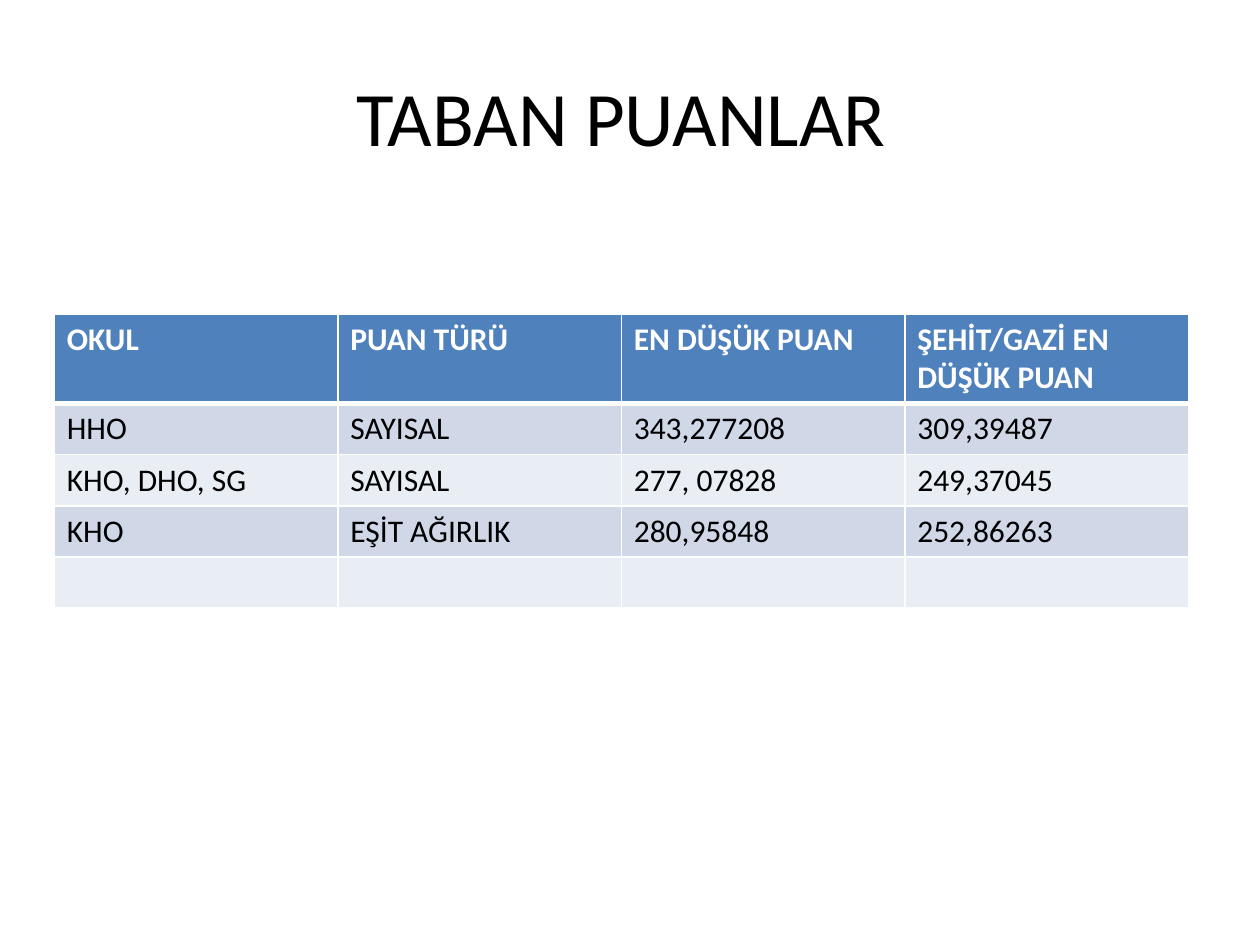
from lxml.etree import SubElement
from pptx import Presentation
from pptx.dml.color import RGBColor
from pptx.enum.text import MSO_ANCHOR, PP_ALIGN
from pptx.oxml.ns import qn
from pptx.util import Pt

FONT = "Calibri"
BLACK = RGBColor(0x00, 0x00, 0x00)
WHITE = RGBColor(0xFF, 0xFF, 0xFF)
HEADER_BLUE = RGBColor(0x4F, 0x81, 0xBD)
BAND_DARK = RGBColor(0xD0, 0xD8, 0xE8)
BAND_LIGHT = RGBColor(0xE9, 0xED, 0xF4)

HEADER_HEIGHT = 50.4
ROW_HEIGHT = 29.2
SCORES = [
    ["OKUL", "PUAN TÜRÜ", "EN DÜŞÜK PUAN", "ŞEHİT/GAZİ EN DÜŞÜK PUAN"],
    ["HHO", "SAYISAL", "343,277208", "309,39487"],
    ["KHO, DHO, SG", "SAYISAL", "277, 07828", "249,37045"],
    ["KHO", "EŞİT AĞIRLIK", "280,95848", "252,86263"],
    ["", "", "", ""],
]


def add_run(paragraph, text, size, color, bold=False):
    run = paragraph.add_run()
    run.text = text
    run.font.name = FONT
    run.font.size = Pt(size)
    run.font.bold = bold
    run.font.color.rgb = color


def set_borders(cell, bottom_width):
    properties = cell._tc.get_or_add_tcPr()
    widths = {"a:lnL": 1, "a:lnR": 1, "a:lnT": 1, "a:lnB": bottom_width}
    for tag, width in widths.items():
        line = SubElement(properties, qn(tag), w=str(Pt(width)))
        fill = SubElement(line, qn("a:solidFill"))
        SubElement(fill, qn("a:srgbClr"), val=str(WHITE))


def place_title(slide, left, top, width, height):
    title = slide.shapes.title
    title.left, title.top = Pt(left), Pt(top)
    title.width, title.height = Pt(width), Pt(height)
    title.text_frame.vertical_anchor = MSO_ANCHOR.MIDDLE
    paragraph = title.text_frame.paragraphs[0]
    paragraph.alignment = PP_ALIGN.CENTER
    add_run(paragraph, "TABAN PUANLAR", 44, BLACK)


def place_score_table(slide, left, top, width):
    row_count, column_count = len(SCORES), len(SCORES[0])
    height = HEADER_HEIGHT + ROW_HEIGHT * (row_count - 1)
    table = slide.shapes.add_table(
        row_count, column_count, Pt(left), Pt(top), Pt(width), Pt(height)
    ).table
    for column in table.columns:
        column.width = Pt(width / column_count)
    for row_index, texts in enumerate(SCORES):
        is_header = row_index == 0
        table.rows[row_index].height = Pt(HEADER_HEIGHT if is_header else ROW_HEIGHT)
        band = BAND_DARK if row_index % 2 else BAND_LIGHT
        for column_index, text in enumerate(texts):
            cell = table.cell(row_index, column_index)
            set_borders(cell, 3 if is_header else 1)
            cell.fill.solid()
            cell.fill.fore_color.rgb = HEADER_BLUE if is_header else band
            if text:
                color = WHITE if is_header else BLACK
                add_run(cell.text_frame.paragraphs[0], text, 18, color, is_header)


def main():
    presentation = Presentation()
    presentation.slide_width = Pt(720)
    presentation.slide_height = Pt(540)
    slide = presentation.slides.add_slide(presentation.slide_layouts[5])
    place_title(slide, 31, 21, 648, 90)
    place_score_table(slide, 31, 179.5, 648)
    presentation.save("out.pptx")


if __name__ == "__main__":
    main()
